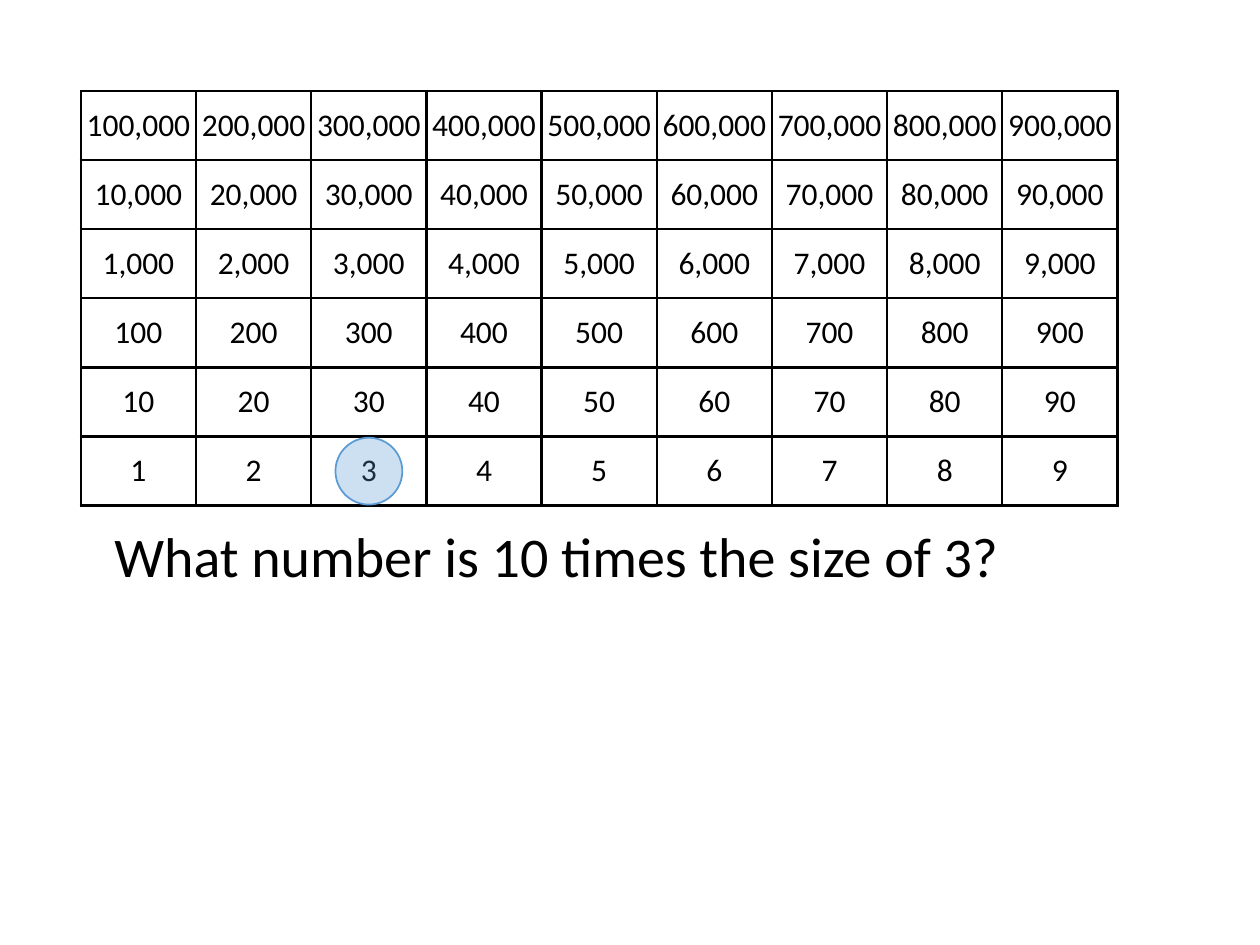
from dataclasses import dataclass

from lxml import etree
from pptx import Presentation
from pptx.dml.color import RGBColor
from pptx.enum import shapes, text
from pptx.oxml import ns
from pptx.util import Pt


@dataclass(frozen=True)
class Theme:
    font: str = "Calibri"
    ink: str = "000000"
    highlight: str = "5B9BD5"
    number_size: int = 18
    question_size: int = 32


theme = Theme()


def style_run(run, size):
    run.font.name = theme.font
    run.font.size = Pt(size)
    run.font.color.rgb = RGBColor.from_string(theme.ink)


def add_borders(cell, width):
    """Draw all four edges of a cell; they must precede its fill in the XML."""
    properties = cell._tc.get_or_add_tcPr()
    for position, edge in enumerate(("lnL", "lnR", "lnT", "lnB")):
        line = etree.Element(ns.qn(f"a:{edge}"), w=str(Pt(width)))
        fill = etree.SubElement(line, ns.qn("a:solidFill"))
        etree.SubElement(fill, ns.qn("a:srgbClr"), val=theme.ink)
        properties.insert(position, line)


presentation = Presentation()
presentation.slide_width, presentation.slide_height = Pt(720), Pt(540)
slide = presentation.slides.add_slide(presentation.slide_layouts[6])

# Question
question = slide.shapes.add_textbox(Pt(58.3), Pt(294.5), Pt(582), Pt(46))
question.text_frame.word_wrap = True
question.text_frame.auto_size = text.MSO_AUTO_SIZE.SHAPE_TO_FIT_TEXT
question.text_frame.text = "What number is 10 times the size of 3?"
style_run(question.text_frame.paragraphs[0].runs[0], theme.question_size)

# Place value chart: digits 1 to 9 across, powers of ten from bottom to top
left, top = 46.2, 52
column_width, row_height = 65.84, 39.5
digits, powers = 9, 6
place_values = slide.shapes.add_table(
    powers, digits, Pt(left), Pt(top),
    Pt(digits * column_width), Pt(powers * row_height)).table
place_values.first_row = place_values.horz_banding = False

for column in place_values.columns:
    column.width = Pt(column_width)
for row_index, row in enumerate(place_values.rows):
    row.height = Pt(row_height)
    for digit, cell in enumerate(row.cells, start=1):
        cell.text_frame.text = f"{digit * 10 ** (powers - 1 - row_index):,}"
        cell.margin_left = cell.margin_right = cell.margin_top = cell.margin_bottom = 0
        cell.vertical_anchor = text.MSO_ANCHOR.MIDDLE
        cell.fill.background()
        add_borders(cell, 1.5)
        number = cell.text_frame.paragraphs[0]
        number.alignment = text.PP_ALIGN.CENTER
        style_run(number.runs[0], theme.number_size)

# Circle around the 3 in the ones row
circled_digit, diameter = 3, 38.2
center_x = left + (circled_digit - 0.5) * column_width
center_y = top + (powers - 0.5) * row_height
circle = slide.shapes.add_shape(
    shapes.MSO_SHAPE.OVAL, Pt(center_x - diameter / 2),
    Pt(center_y - diameter / 2), Pt(diameter), Pt(diameter))
circle.shadow.inherit = False
circle.fill.solid()
circle.fill.fore_color.rgb = RGBColor.from_string(theme.highlight)
circle_color = circle._element.spPr.find(ns.qn("a:solidFill"))[0]
etree.SubElement(circle_color, ns.qn("a:alpha"), val="30000")
circle.line.color.rgb = RGBColor.from_string(theme.highlight)
circle.line.width = Pt(1)

presentation.save("out.pptx")
